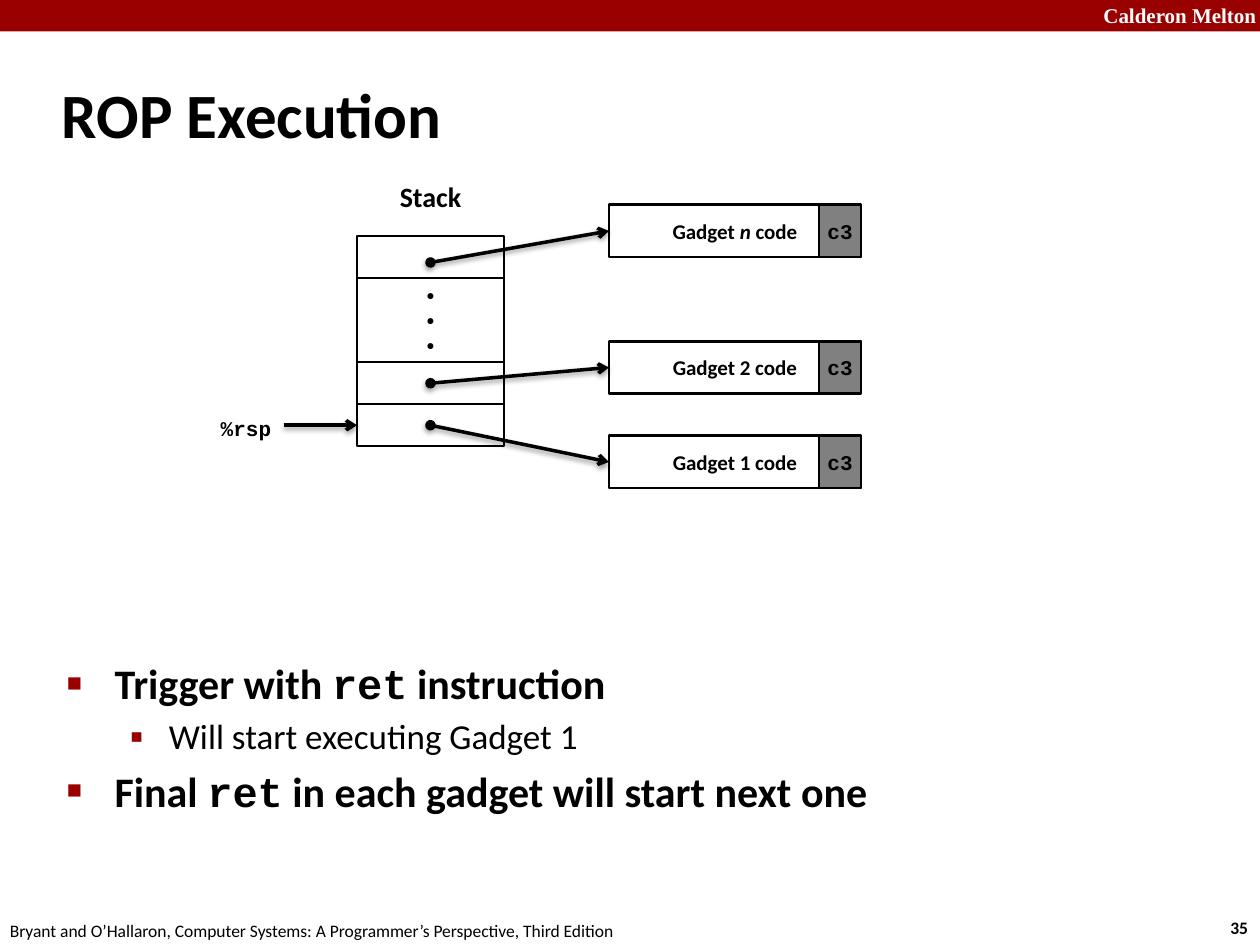
from dataclasses import dataclass
from lxml.etree import SubElement
from pptx import Presentation
from pptx.dml.color import RGBColor
from pptx.enum.shapes import MSO_CONNECTOR as Connector, MSO_SHAPE as Preset
from pptx.enum.text import MSO_ANCHOR as Anchor, MSO_AUTO_SIZE as AutoSize, PP_ALIGN as Align
from pptx.oxml.ns import qn
from pptx.util import Emu, Inches, Pt


@dataclass(frozen=True)
class Theme:
    black: str = "000000"
    white: str = "FFFFFF"
    red: str = "990000"
    gray: str = "808080"
    sans: str = "Calibri"
    mono: str = "Courier New"
    serif: str = "Times New Roman"
    dots: str = "Arial"
    title: int = 36
    point: int = 24
    detail: int = 20
    heading: int = 16
    label: int = 12
    footer: int = 10


THEME = Theme()


@dataclass(frozen=True)
class Area:
    left: float
    top: float
    width: float
    height: float

    def lengths(self) -> list[Emu]:
        return [cells(n) for n in (self.left, self.top, self.width, self.height)]


@dataclass(frozen=True)
class Span:
    text: str
    font: str = THEME.sans
    bold: bool = True
    italic: bool = False


@dataclass(frozen=True)
class Bullet:
    spans: tuple[Span, ...]
    size: int
    level: int
    mark: str
    scale: int
    margin: float
    hanging: float


@dataclass(frozen=True)
class Gadget:
    top: float
    stack_row: float
    spans: tuple[Span, ...]


COLUMNS = 60
ROWS = 45
STACK_LEFT, STACK_WIDTH = 17, 7
STACK_MIDDLE = STACK_LEFT + STACK_WIDTH / 2
CODE_LEFT, CODE_WIDTH, CODE_HEIGHT, RET_WIDTH = 29, 12, 2.5, 2
STACK_ROWS = ((19.25, 2, ""), (17.25, 2, ""), (13.25, 4, "•\n•\n•"), (11.25, 2, ""))
GADGETS = (
    Gadget(20.75, 20.25, (Span("Gadget 1 code"),)),
    Gadget(16.25, 18.25, (Span("Gadget 2 code"),)),
    Gadget(9.75, 12.5, (Span("Gadget "), Span("n", italic=True), Span(" code"))),
)
RET = Span("ret", THEME.mono)
BULLETS = (
    Bullet((Span("Trigger with "), RET, Span(" instruction")), THEME.point, 0, "■", 60, 0.38, 0.38),
    Bullet((Span("Will start executing Gadget 1", bold=False),), THEME.detail, 1, "▪", 110, 0.81, 0.31),
    Bullet((Span("Final "), RET, Span(" in each gadget will start next one")), THEME.point, 0, "■", 60, 0.38, 0.38),
)


def cells(count: float) -> Emu:
    return Emu(round(count * Inches(10) / COLUMNS))


def place(shape, area: Area) -> None:
    shape.left, shape.top, shape.width, shape.height = area.lengths()


def write(para, spans: tuple[Span, ...], size: int, color: str = THEME.black, align=Align.LEFT) -> None:
    para.alignment = align
    for span in spans:
        run = para.add_run()
        run.text = span.text
        font = run.font
        font.name, font.size = span.font, Pt(size)
        font.bold, font.italic = span.bold, span.italic
        font.color.rgb = RGBColor.from_string(color)


def add_label(page, area: Area, span: Span, size: int, color: str = THEME.black,
              align=Align.LEFT, anchor=Anchor.TOP, wrap: bool = True) -> None:
    frame = page.shapes.add_textbox(*area.lengths()).text_frame
    frame.word_wrap, frame.vertical_anchor = wrap, anchor
    write(frame.paragraphs[0], (span,), size, color, align)


def add_box(page, area: Area, fill: str = "", border: float = 0):
    box = page.shapes.add_shape(Preset.RECTANGLE, *area.lengths())
    box.shadow.inherit = False
    if fill:
        box.fill.solid()
        box.fill.fore_color.rgb = RGBColor.from_string(fill)
    else:
        box.fill.background()
    if border:
        box.line.color.rgb = RGBColor.from_string(THEME.black)
        box.line.width = Pt(border)
    else:
        box.line.fill.background()
    box.text_frame.vertical_anchor = Anchor.MIDDLE
    return box


def add_arrow(page, start: tuple[float, float], end: tuple[float, float], dot: bool = True) -> None:
    arrow = page.shapes.add_connector(Connector.STRAIGHT, *map(cells, start + end))
    arrow.line.color.rgb = RGBColor.from_string(THEME.black)
    arrow.line.width = Pt(2)
    properties = arrow.element.spPr
    line = properties.find(qn("a:ln"))
    if dot:
        SubElement(line, qn("a:headEnd"), type="oval")
    SubElement(line, qn("a:tailEnd"), type="arrow")
    effects = SubElement(properties, qn("a:effectLst"))
    shadow = SubElement(effects, qn("a:outerShdw"), blurRad=str(Pt(3.1)), dist=str(Pt(1.6)),
                        dir="5400000", rotWithShape="0")
    color = SubElement(shadow, qn("a:srgbClr"), val=THEME.black)
    SubElement(color, qn("a:alpha"), val="38000")


def add_bullet(para, bullet: Bullet) -> None:
    write(para, bullet.spans, bullet.size)
    para.level = bullet.level
    properties = para._p.get_or_add_pPr()
    properties.set("marL", str(Inches(bullet.margin)))
    properties.set("indent", str(-Inches(bullet.hanging)))
    color = SubElement(properties, qn("a:buClr"))
    SubElement(color, qn("a:srgbClr"), val=THEME.red)
    SubElement(properties, qn("a:buSzPct"), val=str(bullet.scale * 1000))
    SubElement(properties, qn("a:buFont"), typeface=THEME.dots)
    SubElement(properties, qn("a:buChar"), char=bullet.mark)


def add_stack(page) -> None:
    for top, height, text in STACK_ROWS:
        frame = add_box(page, Area(STACK_LEFT, top, STACK_WIDTH, height), border=1).text_frame
        frame.margin_top = frame.margin_bottom = 0
        for index, mark in enumerate(text.split()):
            para = frame.add_paragraph() if index else frame.paragraphs[0]
            write(para, (Span(mark, THEME.dots),), THEME.label, align=Align.CENTER)


def add_gadget(page, gadget: Gadget) -> None:
    ret_left = CODE_LEFT + CODE_WIDTH - RET_WIDTH
    ret = add_box(page, Area(ret_left, gadget.top, RET_WIDTH, CODE_HEIGHT), THEME.gray, 1)
    ret.text_frame.margin_left = ret.text_frame.margin_right = 0
    write(ret.text_frame.paragraphs[0], (Span("c3", THEME.mono),), THEME.label, align=Align.CENTER)
    code = add_box(page, Area(CODE_LEFT, gadget.top, CODE_WIDTH, CODE_HEIGHT), border=1.5)
    write(code.text_frame.paragraphs[0], gadget.spans, THEME.label, align=Align.CENTER)


def add_frame(page) -> None:
    add_box(page, Area(0, 0, COLUMNS, 1.5), THEME.red)
    add_label(page, Area(51.84, -0.18, 8.58, 1.8), Span("Calderon Melton", THEME.serif),
              THEME.label, THEME.white, Align.RIGHT)
    add_label(page, Area(58, 43.38, 2.22, 1.62), Span("35"), THEME.footer, wrap=False)
    add_label(page, Area(-0.12, 43.5, 30.48, 1.62),
              Span("Bryant and O’Hallaron, Computer Systems: A Programmer’s Perspective, Third Edition", bold=False),
              THEME.footer, wrap=False)


def add_outline(page) -> None:
    title, body = page.placeholders
    place(title, Area(2.34, 2.88, 49.8, 5))
    title.text_frame.vertical_anchor = Anchor.MIDDLE
    write(title.text_frame.paragraphs[0], (Span("ROP Execution"),), THEME.title)
    place(body, Area(2.58, 31, 51.84, 10.56))
    frame = body.text_frame
    frame.auto_size = AutoSize.NONE
    for index, bullet in enumerate(BULLETS):
        add_bullet(frame.add_paragraph() if index else frame.paragraphs[0], bullet)


def main() -> None:
    deck = Presentation()
    deck.slide_width, deck.slide_height = cells(COLUMNS), cells(ROWS)
    page = deck.slides.add_slide(deck.slide_layouts[1])
    add_frame(page)
    add_outline(page)
    add_stack(page)
    for gadget in GADGETS:
        add_gadget(page, gadget)
    for gadget in GADGETS:
        add_arrow(page, (STACK_MIDDLE, gadget.stack_row), (CODE_LEFT, gadget.top + CODE_HEIGHT / 2))
    add_arrow(page, (13.5, 20.25), (STACK_LEFT, 20.25), dot=False)
    add_label(page, Area(STACK_LEFT, 8.25, STACK_WIDTH, 2.22), Span("Stack"), THEME.heading, align=Align.CENTER)
    add_label(page, Area(6.5, 19.38, 7, 2), Span("%rsp", THEME.mono), THEME.label,
              align=Align.RIGHT, anchor=Anchor.MIDDLE)
    deck.save("out.pptx")


if __name__ == "__main__":
    main()
